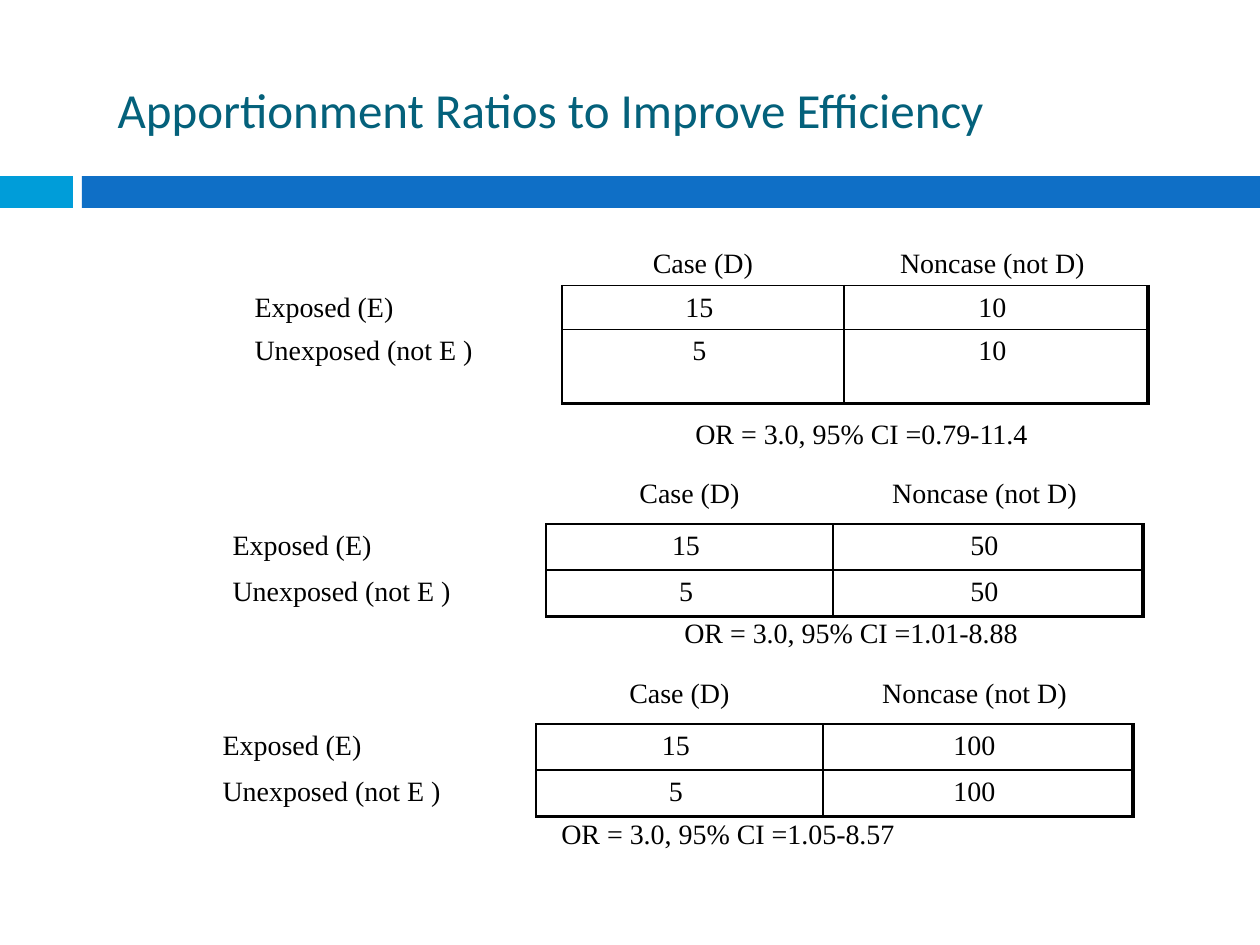
"""Build a slide comparing case-control tables with growing control groups."""
from dataclasses import dataclass

from pptx import Presentation
from pptx.dml.color import RGBColor
from pptx.enum.shapes import MSO_SHAPE as Shape
from pptx.enum.text import MSO_ANCHOR as Anchor, PP_ALIGN as Align
from pptx.oxml.ns import qn
from pptx.slide import Slide
from pptx.table import _Cell as Cell
from pptx.text.text import _Paragraph as Paragraph
from pptx.util import Emu, Pt
from lxml.etree import SubElement

SCALE = 914400 / 126
BLACK = RGBColor(0x00, 0x00, 0x00)
TEAL = RGBColor(0x04, 0x61, 0x7B)
CYAN = RGBColor(0x00, 0x9D, 0xD9)
BLUE = RGBColor(0x0F, 0x6F, 0xC6)
THIN, THICK = Pt(1), Pt(2.25)


@dataclass(frozen=True)
class Box:
    left: int
    top: int
    width: int
    height: int

    def emu(self) -> tuple[Emu, ...]:
        return tuple(px(n) for n in (self.left, self.top, self.width, self.height))


@dataclass(frozen=True)
class Study:
    left: int
    top: int
    columns: tuple[int, int, int]
    rows: tuple[int, int, int]
    noncases: int
    result: str
    result_box: Box


BARS = ((Box(0, 176, 73, 32), CYAN), (Box(82, 176, 1178, 32), BLUE))
STUDIES = (
    Study(242, 242, (320, 282, 304), (43, 44, 74), 10,
          "OR = 3.0, 95% CI =0.79-11.4", Box(683, 410, 388, 46)),
    Study(220, 472, (326, 287, 310), (52, 44, 43), 50,
          "OR = 3.0, 95% CI =1.01-8.88", Box(672, 609, 389, 46)),
    Study(210, 672, (326, 287, 310), (52, 46, 46), 100,
          "OR = 3.0, 95% CI =1.05-8.57", Box(549, 810, 391, 46)),
)


def px(length: int) -> Emu:
    return Emu(round(length * SCALE))


def style(para: Paragraph, name: str, size: int, color: RGBColor) -> None:
    para.font.name = name
    para.font.size = Pt(size)
    para.font.color.rgb = color


def cell_edges(row: int, column: int) -> dict[str, int]:
    """Return the visible border widths of a cell by side."""
    if row and column:
        return {"L": THIN, "R": THICK if column == 2 else THIN,
                "T": THIN, "B": THICK if row == 2 else THIN}
    if row:
        return {"R": THIN}
    return {"B": THIN} if column else {}


def draw_edges(cell: Cell, edges: dict[str, int]) -> None:
    """Draw the given sides in black and hide the others."""
    properties = cell._tc.get_or_add_tcPr()
    for index, side in enumerate("LRTB"):
        line = SubElement(properties, qn(f"a:ln{side}"))
        properties.insert(index, line)
        if side in edges:
            line.set("w", str(int(edges[side])))
            fill = SubElement(line, qn("a:solidFill"))
            SubElement(fill, qn("a:srgbClr")).set("val", str(BLACK))
        else:
            SubElement(line, qn("a:noFill"))


def add_title(page: Slide, text: str) -> None:
    title = page.shapes.title
    title.left, title.top, title.width, title.height = Box(105, 63, 934, 92).emu()
    title.text_frame.text = text
    title.text_frame.vertical_anchor = Anchor.MIDDLE
    para = title.text_frame.paragraphs[0]
    para.alignment = Align.LEFT
    style(para, "Calibri", 28, TEAL)


def add_bar(page: Slide, box: Box, color: RGBColor) -> None:
    bar = page.shapes.add_shape(Shape.RECTANGLE, *box.emu())
    bar.shadow.inherit = False
    bar.fill.solid()
    bar.fill.fore_color.rgb = color
    bar.line.fill.background()


def add_study(page: Slide, study: Study) -> None:
    """Draw the two-by-two table and its odds ratio."""
    box = Box(study.left, study.top, sum(study.columns), sum(study.rows))
    table = page.shapes.add_table(3, 3, *box.emu()).table
    table.first_row = table.horz_banding = False
    for column, width in zip(table.columns, study.columns):
        column.width = px(width)
    for row, height in zip(table.rows, study.rows):
        row.height = px(height)
    texts = (
        ("", "Case (D)", "Noncase (not D) "),
        ("Exposed (E)", "15 ", f"{study.noncases} "),
        ("Unexposed (not E )", "5 ", f"{study.noncases} "),
    )
    for r, line in enumerate(texts):
        for c, text in enumerate(line):
            cell = table.cell(r, c)
            cell.text = text
            cell.fill.background()
            draw_edges(cell, cell_edges(r, c))
            para = cell.text_frame.paragraphs[0]
            para.alignment = Align.CENTER if c else Align.LEFT
            style(para, "Times New Roman", 16, BLACK)

    frame = page.shapes.add_textbox(*study.result_box.emu()).text_frame
    frame.word_wrap = True
    frame.text = study.result
    style(frame.paragraphs[0], "Times New Roman", 16, BLACK)


def main() -> None:
    deck = Presentation()
    deck.slide_width, deck.slide_height = px(1260), px(945)
    page = deck.slides.add_slide(deck.slide_layouts[5])
    for box, color in BARS:
        add_bar(page, box, color)
    add_title(page, "Apportionment Ratios to Improve Efficiency")
    for study in STUDIES:
        add_study(page, study)
    deck.save("out.pptx")


if __name__ == "__main__":
    main()
